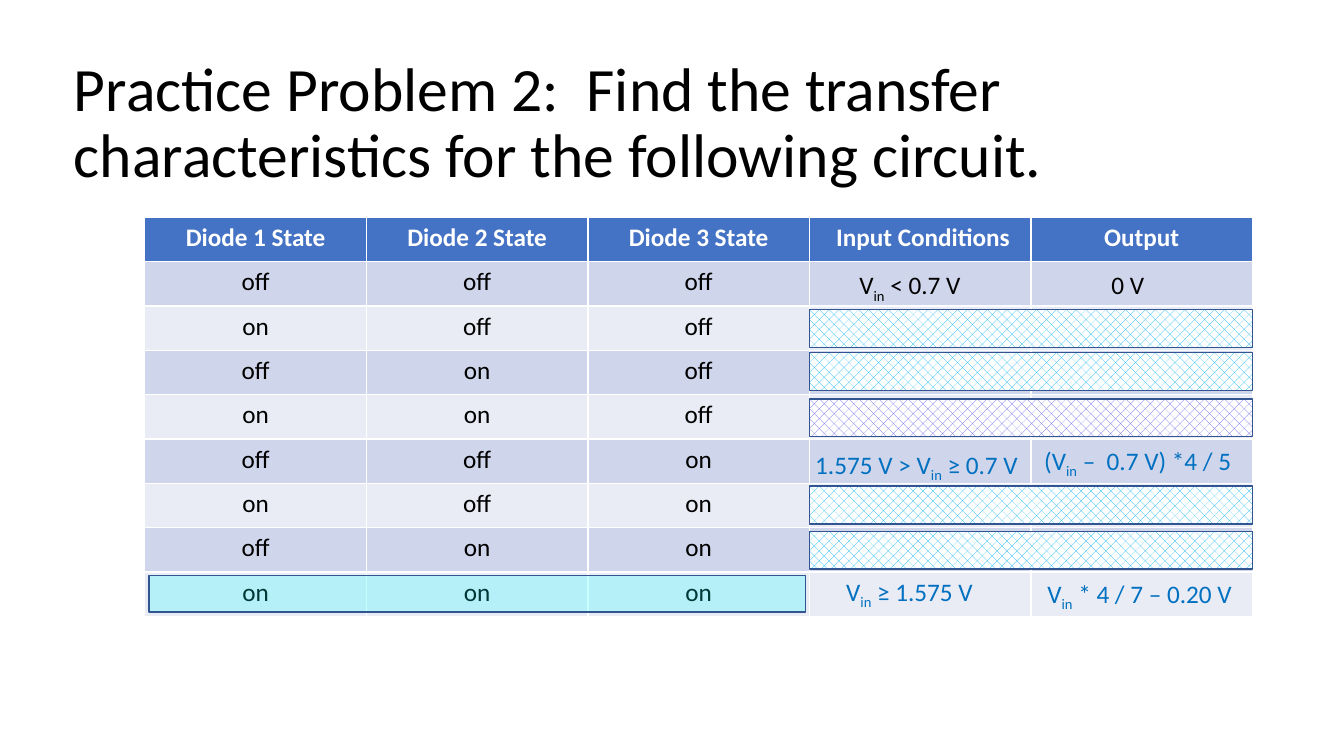
"""Build the diode transfer characteristics slide."""
from pptx import Presentation
from pptx.dml.color import RGBColor
from pptx.enum.dml import MSO_PATTERN
from pptx.enum.shapes import MSO_SHAPE
from pptx.enum.text import MSO_ANCHOR, PP_ALIGN
from pptx.oxml import parse_xml
from pptx.oxml.ns import nsdecls
from pptx.util import Pt

EMU_PER_PX = 9525
FONT = "Calibri"
RECTANGLE = MSO_SHAPE.RECTANGLE
HATCH = MSO_PATTERN.PERCENT_30
MIDDLE = MSO_ANCHOR.MIDDLE
CENTER = PP_ALIGN.CENTER
COLORS = {
    "black": "000000",
    "white": "FFFFFF",
    "header": "4472C4",
    "odd_row": "CFD5EA",
    "even_row": "E9EBF5",
    "answer": "0070C0",
    "cyan_hatch": "00B0F0",
    "violet_hatch": "5B58E6",
    "highlight": "00FFFF",
    "outline": "325491",
}
TITLE = "Practice Problem 2:  Find the transfer characteristics for the following circuit."
TABLE_ROWS = [
    ("Diode 1 State", "Diode 2 State", "Diode 3 State", " Input Conditions", "Output"),
    ("off", "off", "off"),
    ("on", "off", "off"),
    ("off", "on", "off"),
    ("on", "on", "off"),
    ("off", "off", "on"),
    ("on", "off", "on"),
    ("off", "on", "on"),
    ("on", "on", "on"),
]
IMPOSSIBLE_STATES = [
    (295, "cyan_hatch"),
    (336, "cyan_hatch"),
    (380, "violet_hatch"),
    (463, "cyan_hatch"),
    (506, "cyan_hatch"),
]
FORMULAS = [
    (809, 252, 133, "black", ("V", "in", " < 0.7 V"), True),
    (1049, 252, 92, "black", ("0 V",), True),
    (767, 423, 218, "answer", ("1.575 V > V", "in", " ≥ 0.7 V"), True),
    (985, 419, 202, "answer", ("(V", "in", " –  0.7 V) *4 / 5"), False),
    (791, 544, 170, "answer", (" V", "in", " ≥ 1.575 V"), True),
    (988, 546, 199, "answer", ("V", "in", " * 4 / 7 – 0.20 V"), False),
]


def px(*lengths):
    """Turn pixel lengths into EMU."""
    return [length * EMU_PER_PX for length in lengths]


def rgb(name):
    """Look up a named colour."""
    return RGBColor.from_string(COLORS[name])


def add_run(paragraph, text, size, color, bold=False):
    """Append one styled run to a paragraph."""
    run = paragraph.add_run()
    run.text = text
    run.font.name = FONT
    run.font.size = Pt(size)
    run.font.bold = bold
    run.font.color.rgb = rgb(color)
    return run


def add_title(slide):
    """Add the two-line heading."""
    frame = slide.shapes.add_textbox(*px(61, 49, 1158, 139)).text_frame
    frame.word_wrap = True
    frame.vertical_anchor = MIDDLE
    paragraph = frame.paragraphs[0]
    paragraph.line_spacing = 0.9
    add_run(paragraph, TITLE, 44, "black")


def add_state_table(slide):
    """Add the table of diode states."""
    size = len(TABLE_ROWS), len(TABLE_ROWS[0])
    table = slide.shapes.add_table(*size, *px(138, 207, 1055, 380)).table
    for row_index, texts in enumerate(TABLE_ROWS):
        is_header = row_index == 0
        band = "header" if is_header else "odd_row" if row_index % 2 else "even_row"
        for cell in table.rows[row_index].cells:
            cell.fill.solid()
            cell.fill.fore_color.rgb = rgb(band)
        for column_index, text in enumerate(texts):
            paragraph = table.cell(row_index, column_index).text_frame.paragraphs[0]
            paragraph.alignment = CENTER
            add_run(paragraph, text, 18, "white" if is_header else "black", is_header)


def add_box(slide, left, top, width, height):
    """Add an outlined rectangle without a shadow."""
    shape = slide.shapes.add_shape(RECTANGLE, *px(left, top, width, height))
    shape.shadow.inherit = False
    shape.line.color.rgb = rgb("outline")
    shape.line.width = Pt(1)
    return shape


def add_hatched_bar(slide, top, color):
    """Cover the result cells of an impossible state."""
    fill = add_box(slide, 771, top, 422, 36).fill
    fill.patterned()
    fill.pattern = HATCH
    fill.fore_color.rgb = rgb(color)
    fill.back_color.rgb = rgb("white")


def add_highlight(slide):
    """Tint the last row of states with a translucent box."""
    shape = add_box(slide, 142, 548, 625, 35)
    shape.fill.solid()
    shape.fill.fore_color.rgb = rgb("highlight")
    color = shape.fill._xPr.solidFill[0]
    color.append(parse_xml(f'<a:alpha {nsdecls("a")} val="22000"/>'))


def add_formula(slide, left, top, width, color, parts, wraps):
    """Add a formula whose second part is a subscript."""
    frame = slide.shapes.add_textbox(*px(left, top, width, 38)).text_frame
    frame.word_wrap = wraps
    for index, text in enumerate(parts):
        run = add_run(frame.paragraphs[0], text, 18, color)
        if index == 1:
            run._r.get_or_add_rPr().set("baseline", "-25000")


def main():
    """Assemble and save the slide."""
    presentation = Presentation()
    presentation.slide_width, presentation.slide_height = px(1280, 720)
    slide = presentation.slides.add_slide(presentation.slide_layouts[6])
    add_title(slide)
    add_state_table(slide)
    for top, color in IMPOSSIBLE_STATES:
        add_hatched_bar(slide, top, color)
    add_highlight(slide)
    for formula in FORMULAS:
        add_formula(slide, *formula)
    presentation.save("out.pptx")


if __name__ == "__main__":
    main()
